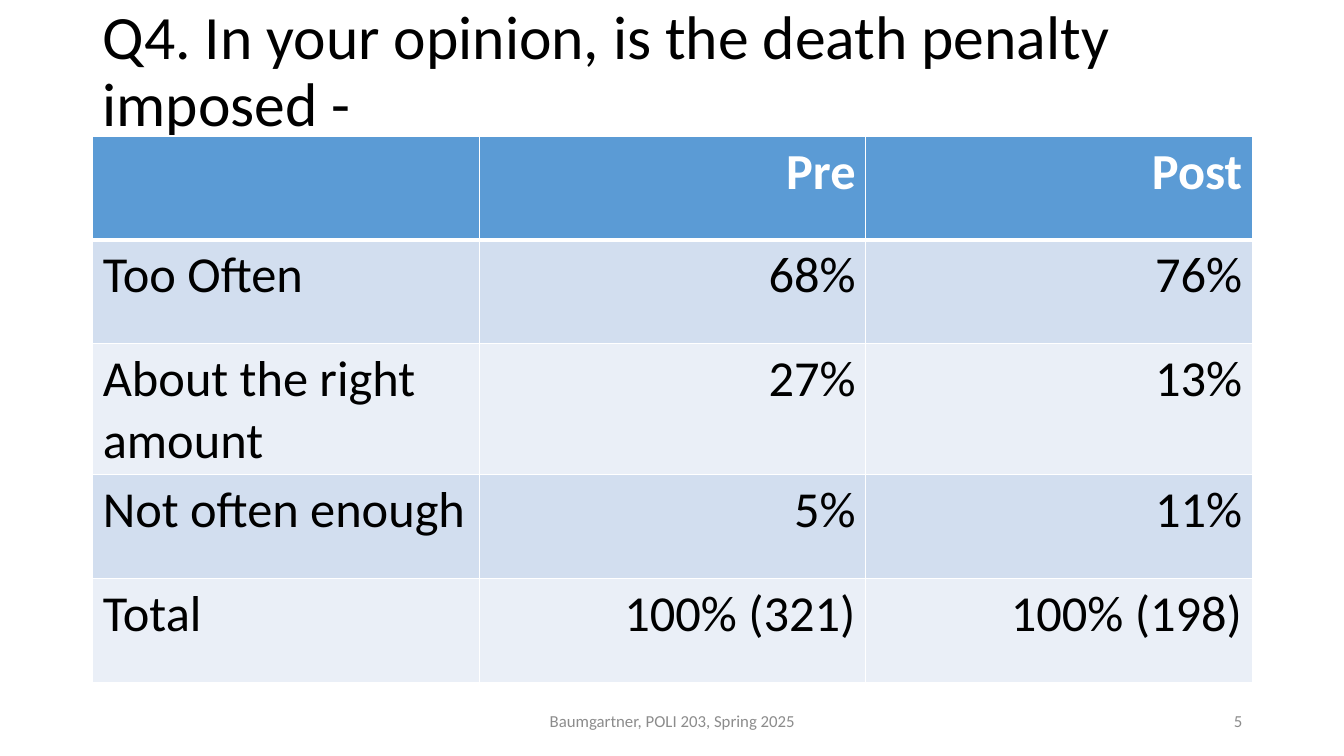
import pptx
import pptx.util
import pptx.dml.color
import pptx.enum.text
from lxml import etree
from pptx.oxml.ns import qn

Inches, Pt = pptx.util.Inches, pptx.util.Pt
RGBColor = pptx.dml.color.RGBColor
ALIGN = pptx.enum.text.PP_ALIGN
ANCHOR = pptx.enum.text.MSO_ANCHOR

# Content
TITLE = "Q4. In your opinion, is the death penalty imposed -"
ROWS = [
    ("", "Pre", "Post"),
    ("Too Often", "68%", "76%"),
    ("About the right amount", "27%", "13%"),
    ("Not often enough", "5%", "11%"),
    ("Total", "100% (321)", "100% (198)"),
]
FOOTER = "Baumgartner, POLI 203, Spring 2025"
SLIDE_NUMBER = "5"

# Style
FONT = "Calibri"
BLACK = RGBColor(0x00, 0x00, 0x00)
WHITE = RGBColor(0xFF, 0xFF, 0xFF)
GRAY = RGBColor(0x8C, 0x8C, 0x8C)
HEADER_BLUE = RGBColor(0x5B, 0x9B, 0xD5)
BANDS = [RGBColor(0xEA, 0xEF, 0xF7), RGBColor(0xD2, 0xDE, 0xEF)]

# Layout in inches
LEFT, CONTENT_WIDTH = 0.92, 11.5
TABLE_TOP, ROW_HEIGHT = 1.35, 1.03
FOOTER_TOP, FOOTER_HEIGHT = 6.95, 0.4


def add_run(paragraph, text, size, color, bold=False):
    run = paragraph.add_run()
    run.text = text
    run.font.name = FONT
    run.font.size = Pt(size)
    run.font.bold = bold
    run.font.color.rgb = color


def add_text(slide, box, text, size, color, align, line_spacing=1.0):
    shape = slide.shapes.add_textbox(*(Inches(length) for length in box))
    frame = shape.text_frame
    frame.word_wrap = True
    frame.vertical_anchor = ANCHOR.MIDDLE
    paragraph = frame.paragraphs[0]
    paragraph.alignment = align
    paragraph.line_spacing = line_spacing
    add_run(paragraph, text, size, color)


def add_borders(cell, widths):
    properties = cell._tc.get_or_add_tcPr()
    for side, width in widths.items():
        line = etree.SubElement(properties, qn("a:ln" + side), w=str(Pt(width)))
        fill = etree.SubElement(line, qn("a:solidFill"))
        etree.SubElement(fill, qn("a:srgbClr"), val=str(WHITE))


def add_results_table(slide):
    column_count = len(ROWS[0])
    table = slide.shapes.add_table(
        len(ROWS), column_count, Inches(LEFT), Inches(TABLE_TOP),
        Inches(CONTENT_WIDTH), Inches(ROW_HEIGHT * len(ROWS))).table
    for row_index, values in enumerate(ROWS):
        header = row_index == 0
        for column_index, value in enumerate(values):
            cell = table.cell(row_index, column_index)
            # A thick rule separates the header from the body
            add_borders(cell, {"L": 1, "R": 1,
                               "T": 3 if row_index == 1 else 1,
                               "B": 3 if header else 1})
            cell.fill.solid()
            cell.fill.fore_color.rgb = HEADER_BLUE if header else BANDS[row_index % 2]
            paragraph = cell.text_frame.paragraphs[0]
            paragraph.alignment = ALIGN.RIGHT if column_index else ALIGN.LEFT
            if value:
                add_run(paragraph, value, 36, WHITE if header else BLACK, header)


def main():
    presentation = pptx.Presentation()
    presentation.slide_width = Inches(13.33)
    presentation.slide_height = Inches(7.5)
    slide = presentation.slides.add_slide(presentation.slide_layouts[6])

    # Title and table
    add_text(slide, (LEFT, 0, CONTENT_WIDTH, 1.45), TITLE, 44, BLACK, ALIGN.LEFT, 0.9)
    add_results_table(slide)

    # Footer
    add_text(slide, (9.42, FOOTER_TOP, 3, FOOTER_HEIGHT),
             SLIDE_NUMBER, 12, GRAY, ALIGN.RIGHT)
    add_text(slide, (4.42, FOOTER_TOP, 4.5, FOOTER_HEIGHT),
             FOOTER, 12, GRAY, ALIGN.CENTER)

    presentation.save("out.pptx")


if __name__ == "__main__":
    main()
